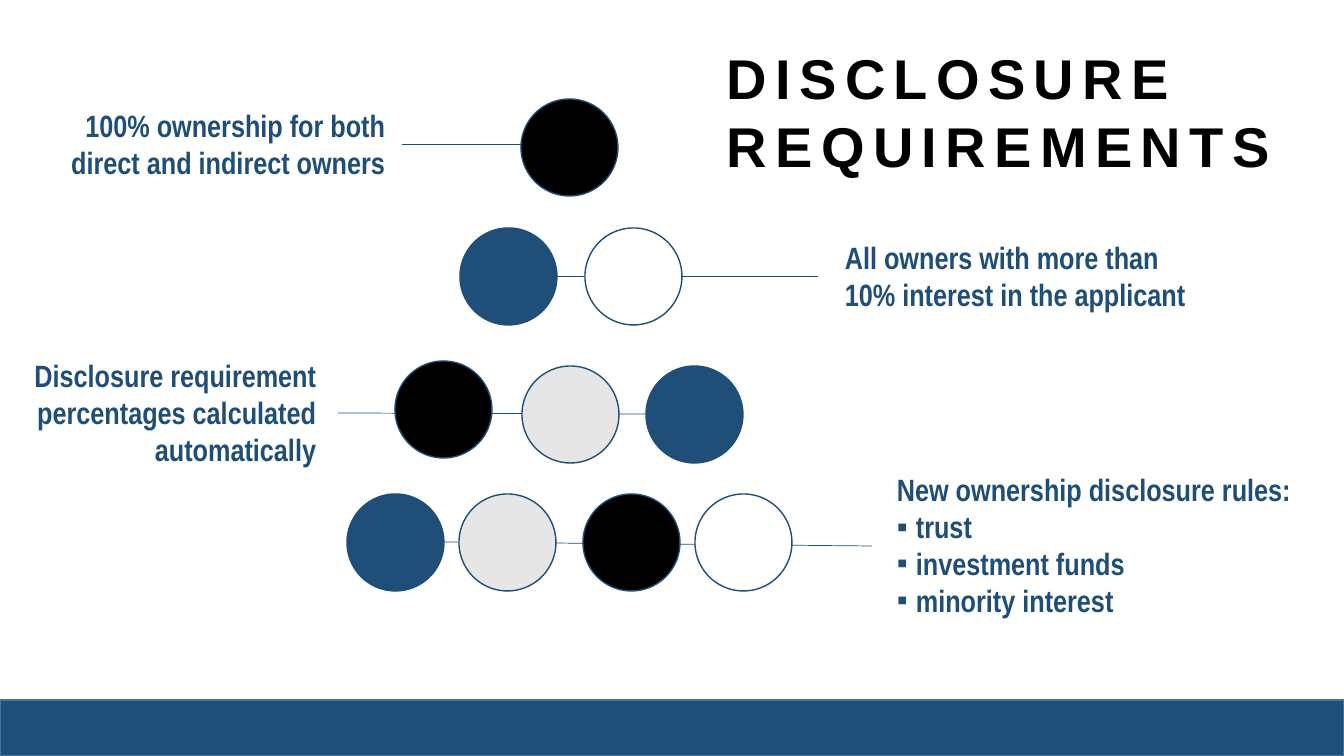
from lxml.etree import SubElement
from pptx import Presentation
from pptx.dml.color import RGBColor
from pptx.enum.shapes import MSO_CONNECTOR as CONNECTOR, MSO_SHAPE as SHAPE
from pptx.enum.text import PP_ALIGN as ALIGN
from pptx.oxml.ns import qn
from pptx.util import Pt

NAVY = RGBColor(0x1F, 0x4E, 0x79)
EDGE = RGBColor(0x43, 0x73, 0x9E)
GREY = RGBColor(0xE7, 0xE6, 0xE6)
BLACK = RGBColor(0, 0, 0)
WHITE = RGBColor(0xFF, 0xFF, 0xFF)

PX = 914400 / 100.8
WIDTH, HEIGHT = 1344, 756
FOOTER_HEIGHT = 56
DIAMETER = 97
BULLET = "▪"
BULLET_INDENT = 19

TITLE = ["DISCLOSURE", "REQUIREMENTS"]
LABELS = [
    (["100% ownership for both direct and indirect owners"], (11, 102, 384, 85), ALIGN.RIGHT),
    (["All owners with more than 10% interest in the applicant"], (835, 234, 384, 85), ALIGN.LEFT),
    (["Disclosure requirement percentages calculated automatically"], (12, 352, 314, 122), ALIGN.RIGHT),
    (["New ownership disclosure rules:", "▪trust", "▪investment funds", "▪minority interest"],
     (887, 466, 453, 159), ALIGN.LEFT),
]
LINES = [
    (521, 144, 402, 144),
    (818, 276, 556, 276),
    (646, 414, 338, 413),
    (872, 546, 444, 542),
]
CIRCLES = [
    (521, 99, BLACK),
    (460, 228, NAVY), (585, 228, WHITE),
    (395, 361, BLACK), (522, 366, GREY), (646, 366, NAVY),
    (347, 494, NAVY), (459, 494, GREY), (583, 494, BLACK), (695, 494, WHITE),
]


def emu(*lengths):
    return [round(length * PX) for length in lengths]


def add_filled(slide, kind, box, fill, edge):
    shape = slide.shapes.add_shape(kind, *emu(*box))
    shape.shadow.inherit = False
    shape.fill.solid()
    shape.fill.fore_color.rgb = fill
    shape.line.color.rgb = edge
    shape.line.width = Pt(1)


def add_line(slide, ends):
    line = slide.shapes.add_connector(CONNECTOR.STRAIGHT, *emu(*ends))
    line.line.color.rgb = NAVY
    line.line.width = Pt(0.5)
    SubElement(line._element.spPr, qn("a:effectLst"))


def add_bullet(paragraph):
    properties = paragraph._p.get_or_add_pPr()
    indent, = emu(BULLET_INDENT)
    properties.set("marL", str(indent))
    properties.set("indent", str(-indent))
    SubElement(properties, qn("a:buFont"), typeface="Arial")
    SubElement(properties, qn("a:buChar"), char=BULLET)


def add_text(slide, lines, box, *, font, size, color, align=ALIGN.LEFT, tracking=0):
    frame = slide.shapes.add_textbox(*emu(*box)).text_frame
    frame.word_wrap = True
    for index, line in enumerate(lines):
        paragraph = frame.add_paragraph() if index else frame.paragraphs[0]
        paragraph.alignment = align
        if line.startswith(BULLET):
            add_bullet(paragraph)
        run = paragraph.add_run()
        run.text = line.removeprefix(BULLET)
        run.font.name = font
        run.font.size = Pt(size)
        run.font.bold = True
        run.font.color.rgb = color
        if tracking:
            run.font._element.set("spc", str(tracking * 100))


def main():
    presentation = Presentation()
    presentation.slide_width, presentation.slide_height = emu(WIDTH, HEIGHT)
    slide = presentation.slides.add_slide(presentation.slide_layouts[6])
    footer = (0, HEIGHT - FOOTER_HEIGHT, WIDTH, FOOTER_HEIGHT)
    add_filled(slide, SHAPE.RECTANGLE, footer, NAVY, EDGE)
    for ends in LINES:
        add_line(slide, ends)
    for left, top, fill in CIRCLES:
        add_filled(slide, SHAPE.OVAL, (left, top, DIAMETER, DIAMETER), fill, NAVY)
    for lines, box, align in LABELS:
        add_text(slide, lines, box, font="Arial Narrow", size=22, color=NAVY, align=align)
    add_text(slide, TITLE, (717, 39, 613, 146), font="Arial", size=40, color=BLACK, tracking=6)
    presentation.save("out.pptx")


if __name__ == "__main__":
    main()
